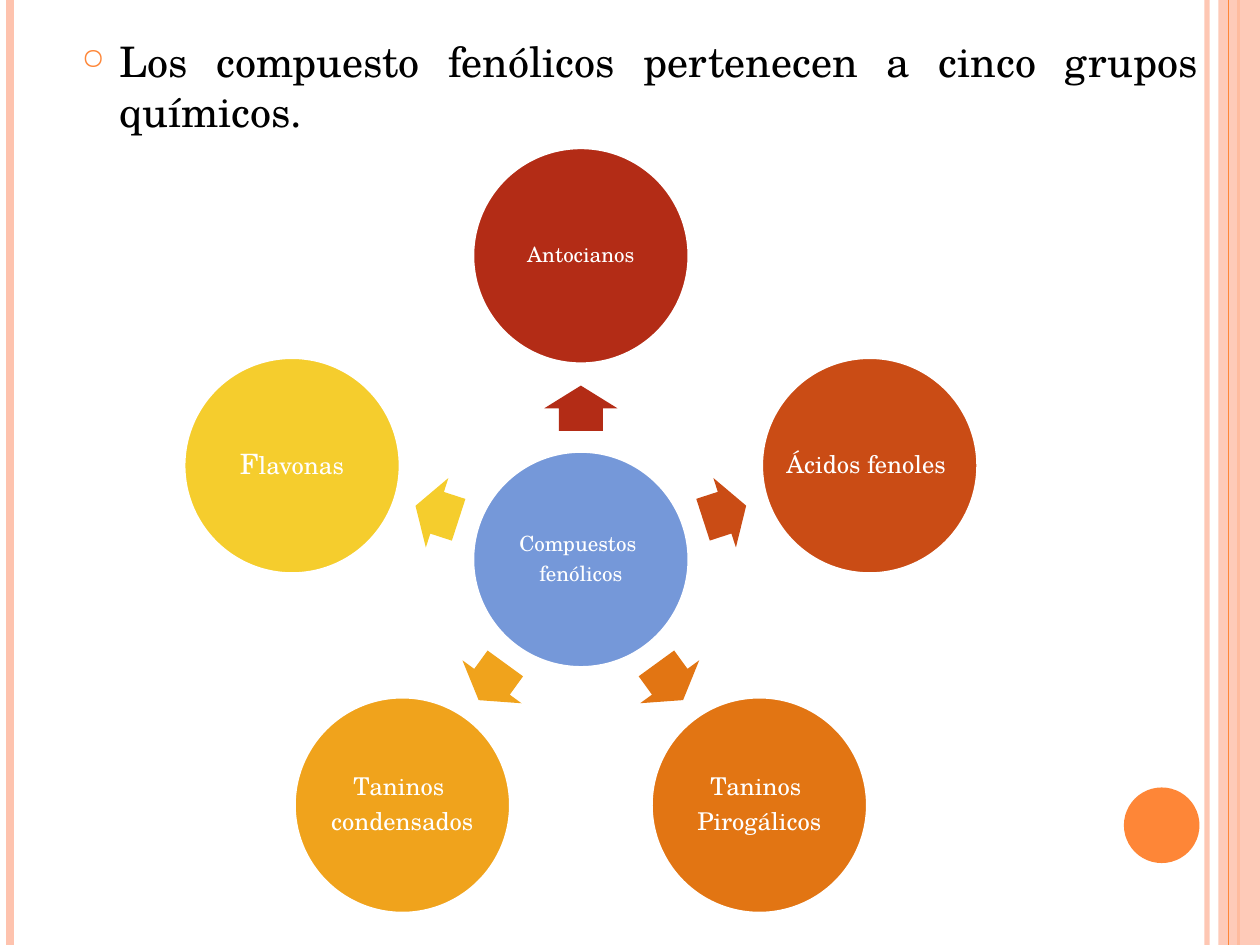
from dataclasses import dataclass
from math import cos, radians, sin

from lxml.etree import SubElement
from pptx import Presentation
from pptx.dml.color import RGBColor
from pptx.enum.shapes import MSO_CONNECTOR, MSO_SHAPE
from pptx.enum.text import MSO_ANCHOR, PP_ALIGN
from pptx.oxml.ns import qn
from pptx.util import Inches, Pt


@dataclass(frozen=True)
class Theme:
    font: str = "TeX Gyre Schola"
    text: str = "000000"
    white: str = "FFFFFF"
    accent: str = "FE8637"
    pale: str = "FEC3AE"
    hub: str = "7598D9"
    title_size: int = 24
    initial_size: int = 16
    label_size: int = 14
    small_size: int = 12


theme = Theme()


def add_solid(kind, center_x, center_y, width, height, color):
    """Add a filled shape without outline or shadow, placed by its centre."""
    shape = slide.shapes.add_shape(
        kind, Inches(center_x - width / 2), Inches(center_y - height / 2),
        Inches(width), Inches(height))
    shape.shadow.inherit = False
    shape.fill.solid()
    shape.fill.fore_color.rgb = RGBColor.from_string(color)
    shape.line.fill.background()
    return shape


def add_labelled_circle(center_x, center_y, color, lines, size):
    """Add a circle whose label is a list of lines, each a list of runs."""
    circle = add_solid(MSO_SHAPE.OVAL, center_x, center_y, DIAMETER, DIAMETER, color)
    circle.line.color.rgb = RGBColor.from_string(theme.white)
    circle.line.width = Pt(2)
    frame = circle.text_frame
    frame.word_wrap = False
    frame.vertical_anchor = MSO_ANCHOR.MIDDLE
    frame.margin_left = frame.margin_right = Inches(0.02)
    frame.margin_top = frame.margin_bottom = Inches(0.02)
    for index, line in enumerate(lines):
        paragraph = frame.paragraphs[0] if index == 0 else frame.add_paragraph()
        paragraph.alignment = PP_ALIGN.CENTER
        paragraph.line_spacing = 0.9
        paragraph.space_after = Pt(size * 0.35)
        for text in line:
            run = paragraph.add_run()
            run.text = text
            run.font.name = theme.font
            run.font.size = Pt(theme.initial_size if len(text) == 1 else size)
            run.font.color.rgb = RGBColor.from_string(theme.white)


presentation = Presentation()
presentation.slide_width = Inches(10)
presentation.slide_height = Inches(7.5)
slide = presentation.slides.add_slide(presentation.slide_layouts[6])

# Side stripes
band = add_solid(MSO_SHAPE.RECTANGLE, 9.835, 3.75, 0.33, 7.5, theme.pale)
stripes = [
    (9.58, theme.pale, 3, 93),
    (0.08, theme.pale, 4.5, 100),
    (9.83, theme.accent, 1.5, 100),
    (9.75, theme.accent, 0.75, 100),
]
translucent = [(band, 87)]
for x, color, width, opacity in stripes:
    stripe = slide.shapes.add_connector(
        MSO_CONNECTOR.STRAIGHT, Inches(x), 0, Inches(x), presentation.slide_height)
    stripe.line.color.rgb = RGBColor.from_string(color)
    stripe.line.width = Pt(width)
    SubElement(stripe.element.spPr, qn("a:effectLst"))
    translucent.append((stripe, opacity))
    if x == 9.83:
        # The band covers this stripe but not the thinner one
        band.element.addprevious(stripe.element)
for shape, opacity in translucent:
    if opacity < 100:
        color_element = next(shape.element.spPr.iter(qn("a:srgbClr")))
        SubElement(color_element, qn("a:alpha"), val=str(opacity * 1000))
add_solid(MSO_SHAPE.OVAL, 9.22, 6.55, 0.6, 0.6, theme.accent)

# Statement
statement = slide.shapes.add_textbox(Inches(0.55), Inches(0.23), Inches(9.06), Inches(0.95))
statement.text_frame.word_wrap = True
paragraph = statement.text_frame.paragraphs[0]
paragraph.text = "Los compuesto fenólicos pertenecen a cinco grupos químicos."
paragraph.alignment = PP_ALIGN.JUSTIFY
paragraph.space_before = Pt(6)
font = paragraph.runs[0].font
font.name = theme.font
font.size = Pt(theme.title_size)
font.color.rgb = RGBColor.from_string(theme.text)
properties = paragraph._p.get_or_add_pPr()
properties.set("marL", str(Inches(0.3)))
properties.set("indent", str(-Inches(0.3)))
bullet_color = SubElement(properties, qn("a:buClr"))
SubElement(bullet_color, qn("a:srgbClr"), val=theme.accent)
SubElement(properties, qn("a:buSzPct"), val="70000")
SubElement(properties, qn("a:buChar"), char="○")

# Radial diagram: five groups at equal angles, clockwise from the top
CENTER_X, CENTER_Y = 4.61, 4.44
DIAMETER = 1.72
GROUP_RADIUS = 2.41
ARROW_RADIUS = 1.2

groups = [
    ("B32C16", [["Antocianos"]], theme.small_size),
    ("CA4C15", [["Ácidos fenoles "]], theme.label_size),
    ("E27513", [["Taninos "], ["Pirogálicos"]], theme.label_size),
    ("F0A31C", [["Taninos "], ["condensados"]], theme.label_size),
    ("F5CD2D", [["F", "lavonas"]], theme.label_size),
]
add_labelled_circle(CENTER_X, CENTER_Y, theme.hub,
                    [["Compuestos "], ["fenólicos"]], theme.small_size)
for index, (color, lines, size) in enumerate(groups):
    angle = (270 + index * 360 / len(groups)) % 360
    across, down = cos(radians(angle)), sin(radians(angle))
    arrow = add_solid(MSO_SHAPE.RIGHT_ARROW, CENTER_X + ARROW_RADIUS * across,
                      CENTER_Y + ARROW_RADIUS * down, 0.36, 0.58, color)
    arrow.adjustments[0] = 0.6
    arrow.adjustments[1] = 0.5
    arrow.rotation = angle
    add_labelled_circle(CENTER_X + GROUP_RADIUS * across,
                        CENTER_Y + GROUP_RADIUS * down, color, lines, size)

presentation.save("out.pptx")
